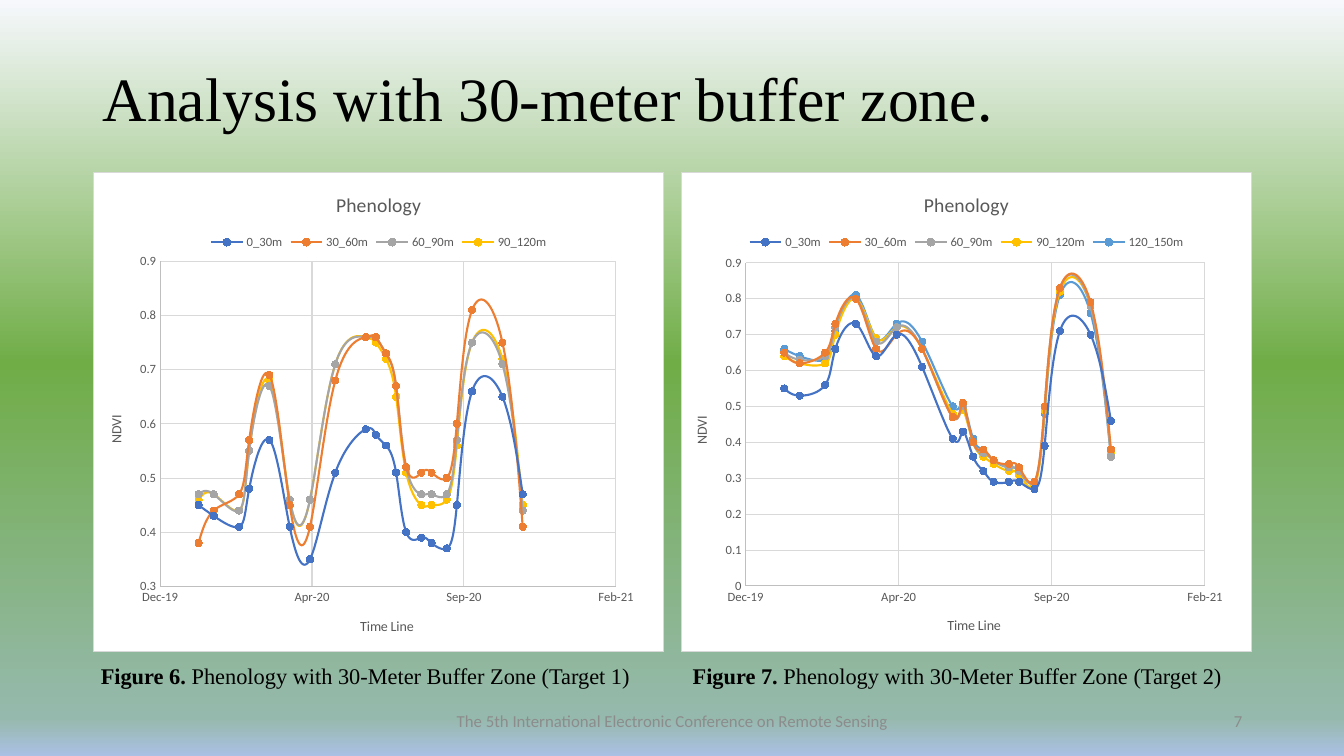
"""Build the slide comparing two NDVI phenology charts for 30-meter buffer zones."""
from lxml.etree import SubElement
from pptx import Presentation
from pptx.chart.data import XyChartData
from pptx.dml.color import RGBColor
from pptx.enum.chart import XL_CHART_TYPE, XL_LEGEND_POSITION, XL_MARKER_STYLE, XL_TICK_MARK
from pptx.enum.text import MSO_ANCHOR, PP_ALIGN
from pptx.oxml import parse_xml
from pptx.oxml.ns import nsdecls, qn
from pptx.util import Inches, Pt

SERIF, SANS = "Times New Roman", "Calibri"
BLACK, TEXT, GRID, AXIS, FOOT = "000000", "595959", "D9D9D9", "BFBFBF", "8C8C8C"
STOPS = [(0, "F6F8FC"), (48, "70AD47"), (95, "96B9AD"), (100, "ABC0E4"), (100, "C7D5ED")]
COLORS = ["4472C4", "ED7D31", "A5A5A5", "FFC000", "5B9BD5"]
START, STEP = 43800, 150
DAYS = [38, 53, 78, 88, 108, 128, 148, 173, 203, 213,
        223, 233, 243, 258, 268, 283, 293, 308, 338, 358]
CHARTS = [
    {"left": 0.92, "min": 0.3, "plot": (0.117, 0.185, 0.799, 0.679), "series": {
        "0_30m": [0.45, 0.43, 0.41, 0.48, 0.57, 0.41, 0.35, 0.51, 0.59, 0.58,
                  0.56, 0.51, 0.4, 0.39, 0.38, 0.37, 0.45, 0.66, 0.65, 0.47],
        "30_60m": [0.38, 0.44, 0.47, 0.57, 0.69, 0.45, 0.41, 0.68, 0.76, 0.76,
                   0.73, 0.67, 0.52, 0.51, 0.51, 0.5, 0.6, 0.81, 0.75, 0.41],
        "60_90m": [0.47, 0.47, 0.44, 0.55, 0.67, 0.46, 0.46, 0.71, 0.76, 0.76,
                   0.73, 0.67, 0.52, 0.47, 0.47, 0.47, 0.57, 0.75, 0.71, 0.44],
        "90_120m": [0.46, 0.47, 0.44, 0.55, 0.68, 0.46, 0.46, 0.71, 0.76, 0.75,
                    0.72, 0.65, 0.51, 0.45, 0.45, 0.46, 0.56, 0.75, 0.72, 0.45]}},
    {"left": 6.75, "min": 0, "plot": (0.113, 0.188, 0.805, 0.675), "series": {
        "0_30m": [0.55, 0.53, 0.56, 0.66, 0.73, 0.64, 0.7, 0.61, 0.41, 0.43,
                  0.36, 0.32, 0.29, 0.29, 0.29, 0.27, 0.39, 0.71, 0.7, 0.46],
        "30_60m": [0.65, 0.62, 0.65, 0.73, 0.8, 0.66, 0.7, 0.66, 0.47, 0.51,
                   0.4, 0.38, 0.35, 0.34, 0.33, 0.29, 0.5, 0.83, 0.79, 0.38],
        "60_90m": [0.65, 0.63, 0.64, 0.72, 0.8, 0.68, 0.72, 0.66, 0.47, 0.5,
                   0.4, 0.37, 0.35, 0.33, 0.32, 0.29, 0.5, 0.83, 0.78, 0.36],
        "90_120m": [0.64, 0.62, 0.62, 0.7, 0.8, 0.69, 0.72, 0.66, 0.48, 0.49,
                    0.4, 0.36, 0.34, 0.32, 0.31, 0.28, 0.49, 0.82, 0.78, 0.37],
        "120_150m": [0.66, 0.64, 0.63, 0.71, 0.81, 0.69, 0.73, 0.68, 0.5, 0.51,
                     0.41, 0.38, 0.35, 0.33, 0.32, 0.29, 0.48, 0.81, 0.76, 0.36]}},
]
CAPTION = [("Figure 6.", True), (" Phenology with 30-Meter Buffer Zone (Target 1)\t", False),
           ("Figure 7.", True), (" Phenology with 30-Meter Buffer Zone (Target 2)", False)]
LEFT, MID, RIGHT = PP_ALIGN.LEFT, PP_ALIGN.CENTER, PP_ALIGN.RIGHT
BOXES = [
    ((0.92, 0.44, 11.5, 1.13), [("Analysis with 30-meter buffer zone.", False)], SERIF, 44, BLACK, LEFT),
    ((0.8, 6.52, 11.74, 0.37), CAPTION, SERIF, 16, BLACK, LEFT),
    ((9.42, 6.95, 3, 0.4), [("7", False)], SANS, 12, FOOT, RIGHT),
    ((4.42, 6.95, 4.5, 0.4),
     [("The 5th International Electronic Conference on Remote Sensing", False)], SANS, 12, FOOT, MID),
]


def tint(code):
    return RGBColor.from_string(code)


def style(font, size, color, name=SANS, bold=False):
    font.size, font.name, font.bold = Pt(size), name, bold
    font.color.rgb = tint(color)


def rule(line, color, width=0.75):
    line.color.rgb = tint(color)
    line.width = Pt(width)


def label(frame, text, size):
    frame.text = text
    style(frame.paragraphs[0].runs[0].font, size, TEXT)


def paint(slide):
    fill = slide.background.fill
    fill.gradient()
    fill.gradient_angle = 270
    stops = slide.element.xpath(".//a:gsLst")[0]
    for stop in list(stops):
        stops.remove(stop)
    for place, color in STOPS:
        stop = SubElement(stops, qn("a:gs"), pos=str(place * 1000))
        SubElement(stop, qn("a:srgbClr"), val=color)


def write(slide, place, parts, name, size, color, align):
    box = slide.shapes.add_textbox(*map(Inches, place))
    frame = box.text_frame
    frame.word_wrap = True
    frame.vertical_anchor = MSO_ANCHOR.MIDDLE
    para = frame.paragraphs[0]
    para.alignment = align
    if parts is CAPTION:
        frame.vertical_anchor = MSO_ANCHOR.TOP
        frame.margin_left = Inches(0.2)
        tabs = SubElement(para._p.get_or_add_pPr(), qn("a:tabLst"))
        SubElement(tabs, qn("a:tab"), pos=str(Inches(5.87)), algn="l")
    elif size == 44:
        para.line_spacing = 0.9
    for text, bold in parts:
        run = para.add_run()
        run.text = text
        style(run.font, size, color, name, bold)


def scale(axis, title, low, high, step, form):
    axis.minimum_scale, axis.maximum_scale, axis.major_unit = low, high, step
    axis.major_tick_mark = axis.minor_tick_mark = XL_TICK_MARK.NONE
    axis.has_major_gridlines = True
    rule(axis.major_gridlines.format.line, GRID)
    rule(axis.format.line, AXIS)
    style(axis.tick_labels.font, 9, TEXT)
    axis.tick_labels.number_format = form
    axis.tick_labels.number_format_is_linked = False
    label(axis.axis_title.text_frame, title, 10)


def frame_plot(chart, place):
    root = chart.element
    area = root.xpath("c:chart/c:plotArea")[0]
    for old in area.findall(qn("c:layout")):
        area.remove(old)
    layout = parse_xml(f'<c:layout {nsdecls("c")}/>')
    manual = SubElement(layout, qn("c:manualLayout"))
    items = [("layoutTarget", "inner"), ("xMode", "edge"), ("yMode", "edge")]
    for key, val in items + list(zip("xywh", place)):
        SubElement(manual, qn("c:" + key), val=str(val))
    area.insert(0, layout)
    root.xpath("c:chart")[0].addnext(parse_xml(
        f'<c:spPr {nsdecls("c", "a")}><a:solidFill><a:srgbClr val="FFFFFF"/></a:solidFill>'
        f'<a:ln w="{Pt(0.75)}"><a:solidFill><a:srgbClr val="{GRID}"/></a:solidFill></a:ln></c:spPr>'))
    for node in root.xpath(".//c:ser/c:smooth"):
        node.set("val", "1")


def graph(slide, info):
    data = XyChartData()
    for name, vals in info["series"].items():
        line = data.add_series(name)
        for day, val in zip(DAYS, vals):
            line.add_data_point(START + day, val)
    place = map(Inches, (info["left"], 1.71, 5.67, 4.76))
    chart = slide.shapes.add_chart(XL_CHART_TYPE.XY_SCATTER_SMOOTH, *place, data).chart
    style(chart.font, 10, BLACK)
    chart.has_title = True
    label(chart.chart_title.text_frame, "Phenology", 14)
    chart.has_legend = True
    chart.legend.position = XL_LEGEND_POSITION.TOP
    chart.legend.include_in_layout = False
    style(chart.legend.font, 9, TEXT)
    scale(chart.category_axis, "Time Line", START, START + 3 * STEP, STEP, r"[$-409]mmm\-yy;@")
    scale(chart.value_axis, "NDVI", info["min"], 0.9, 0.1, "General")
    chart.value_axis.axis_title.element.xpath(".//a:bodyPr")[0].set("rot", "-5400000")
    plot = chart.plots[0]
    plot.vary_by_categories = False
    for line, color in zip(plot.series, COLORS):
        rule(line.format.line, color, 1.5)
        mark = line.marker
        mark.style, mark.size = XL_MARKER_STYLE.CIRCLE, 5
        mark.format.fill.solid()
        mark.format.fill.fore_color.rgb = tint(color)
        rule(mark.format.line, color)
    frame_plot(chart, info["plot"])


def main():
    deck = Presentation()
    deck.slide_width, deck.slide_height = Inches(13.33), Inches(7.5)
    slide = deck.slides.add_slide(deck.slide_layouts[6])
    paint(slide)
    for info in CHARTS:
        graph(slide, info)
    for box in BOXES:
        write(slide, *box)
    deck.save("out.pptx")


if __name__ == "__main__":
    main()
